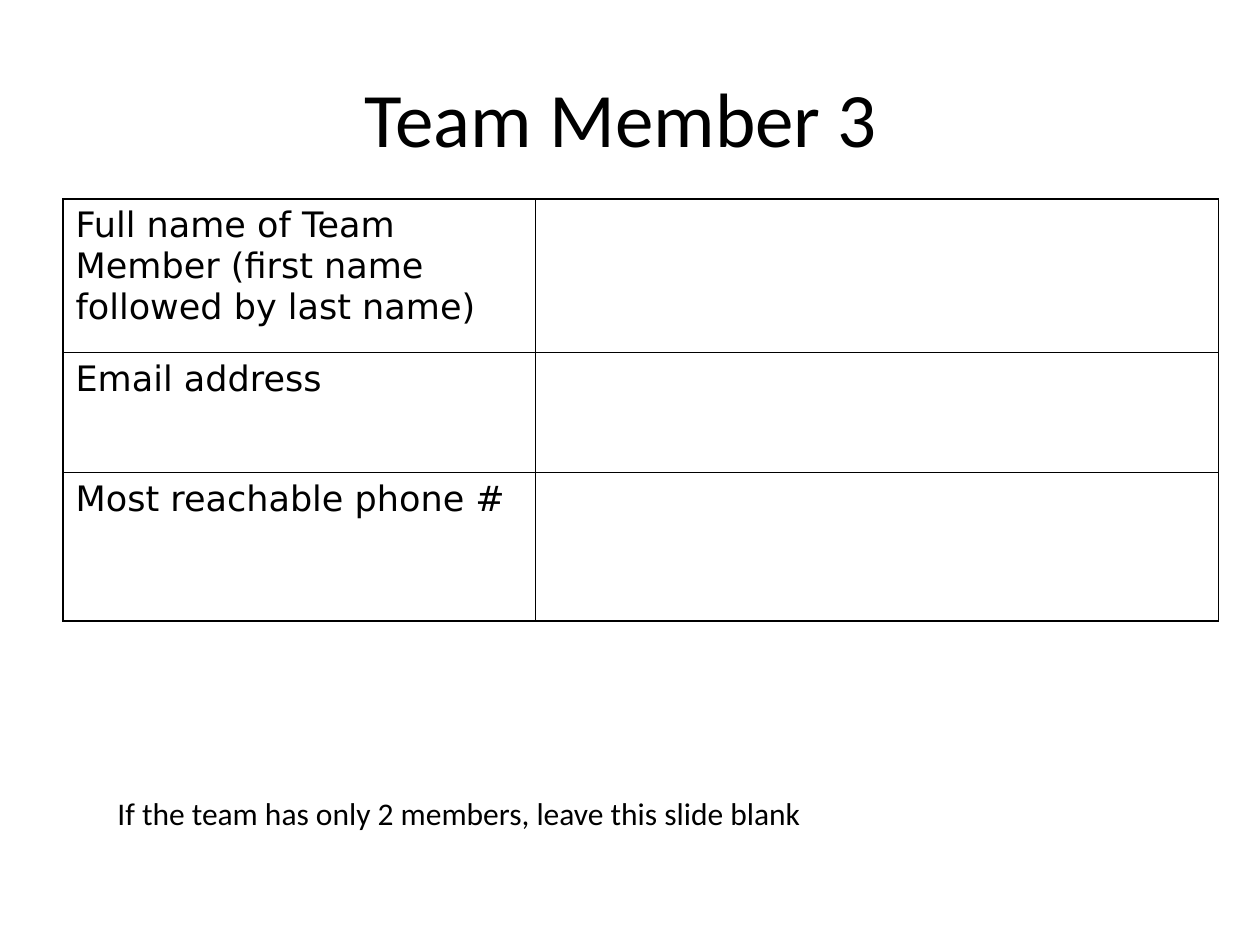
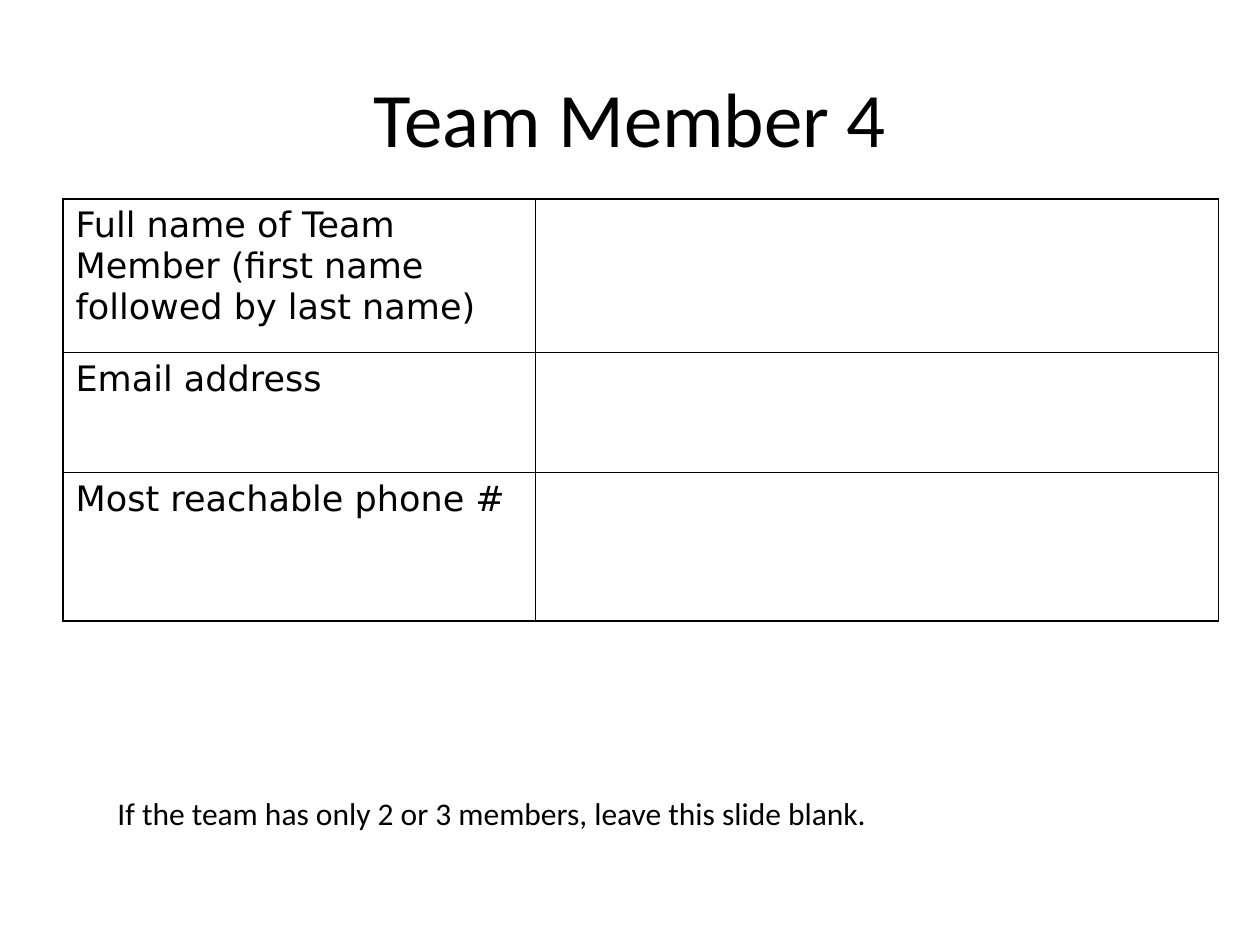
import dataclasses

import lxml.etree
import pptx
import pptx.dml.color
import pptx.enum.text
import pptx.oxml.ns
import pptx.util

Pt = pptx.util.Pt
ANCHOR = pptx.enum.text.MSO_ANCHOR
ALIGN = pptx.enum.text.PP_ALIGN


@dataclasses.dataclass(frozen=True)
class Theme:
    ink: str = "000000"
    paper: str = "FFFFFF"
    body_font: str = "Calibri"
    table_font: str = "DejaVu Sans"
    title_size: int = 44
    label_size: int = 20
    note_size: int = 18
    border: int = 1


@dataclasses.dataclass(frozen=True)
class Box:
    left: float
    top: float
    width: float
    height: float

    def place(self) -> tuple:
        return tuple(Pt(v) for v in dataclasses.astuple(self))


@dataclasses.dataclass(frozen=True)
class Field:
    label: str
    height: float


@dataclasses.dataclass(frozen=True)
class Member:
    title: str
    note: str
    note_width: float


THEME = Theme()
TITLE_BOX = Box(36, 21.6, 648, 90)
TABLE_LEFT, TABLE_TOP = 36, 113.76
COLUMNS = (270, 390.24)
FIELDS = (
    Field("Full name of Team Member (first name followed by last name)", 87.84),
    Field("Email address", 68.4),
    Field("Most reachable phone #", 84.96),
)
MEMBERS = (
    # The trailing space is part of the centred title line
    Member("Team Member 3 ",
           "If the team has only 2 members, leave this slide blank", 414),
    Member("Team Member 4",
           "If the team has only 2 or 3 members, leave this slide blank.", 447.84),
)


def style_text(tf, font: str, size: int) -> None:
    for p in tf.paragraphs:
        for r in p.runs:
            r.font.name = font
            r.font.size = Pt(size)
            r.font.color.rgb = pptx.dml.color.RGBColor.from_string(THEME.ink)


def add_text(s, box: Box, text: str, size: int):
    tf = s.shapes.add_textbox(*box.place()).text_frame
    tf.text = text
    style_text(tf, THEME.body_font, size)
    return tf


def add_borders(cell) -> None:
    qn = pptx.oxml.ns.qn
    tc_pr = cell._tc.get_or_add_tcPr()
    for side in ("a:lnL", "a:lnR", "a:lnT", "a:lnB"):
        ln = lxml.etree.SubElement(tc_pr, qn(side), w=str(Pt(THEME.border)))
        fill = lxml.etree.SubElement(ln, qn("a:solidFill"))
        lxml.etree.SubElement(fill, qn("a:srgbClr"), val=THEME.ink)


def add_form(s) -> None:
    box = Box(TABLE_LEFT, TABLE_TOP, sum(COLUMNS), sum(f.height for f in FIELDS))
    table = s.shapes.add_table(len(FIELDS), len(COLUMNS), *box.place()).table
    table.first_row = table.horz_banding = False
    for column, width in zip(table.columns, COLUMNS):
        column.width = Pt(width)
    for row, field in zip(table.rows, FIELDS):
        row.height = Pt(field.height)
        row.cells[0].text_frame.text = field.label
        style_text(row.cells[0].text_frame, THEME.table_font, THEME.label_size)
        for cell in row.cells:
            add_borders(cell)
            cell.fill.background()


def add_member(prs, member: Member) -> None:
    s = prs.slides.add_slide(prs.slide_layouts[6])
    s.background.fill.solid()
    s.background.fill.fore_color.rgb = pptx.dml.color.RGBColor.from_string(THEME.paper)

    # Title
    tf = add_text(s, TITLE_BOX, member.title, THEME.title_size)
    tf.word_wrap = True
    tf.vertical_anchor = ANCHOR.MIDDLE
    tf.paragraphs[0].alignment = ALIGN.CENTER

    # Contact form
    add_form(s)

    # Note on when to skip the slide
    tf = add_text(s, Box(60, 450, member.note_width, 28.8), member.note, THEME.note_size)
    tf.word_wrap = False
    tf.auto_size = pptx.enum.text.MSO_AUTO_SIZE.SHAPE_TO_FIT_TEXT


def main() -> None:
    prs = pptx.Presentation()
    prs.slide_width, prs.slide_height = Pt(720), Pt(540)
    for member in MEMBERS:
        add_member(prs, member)
    prs.save("out.pptx")


if __name__ == "__main__":
    main()
